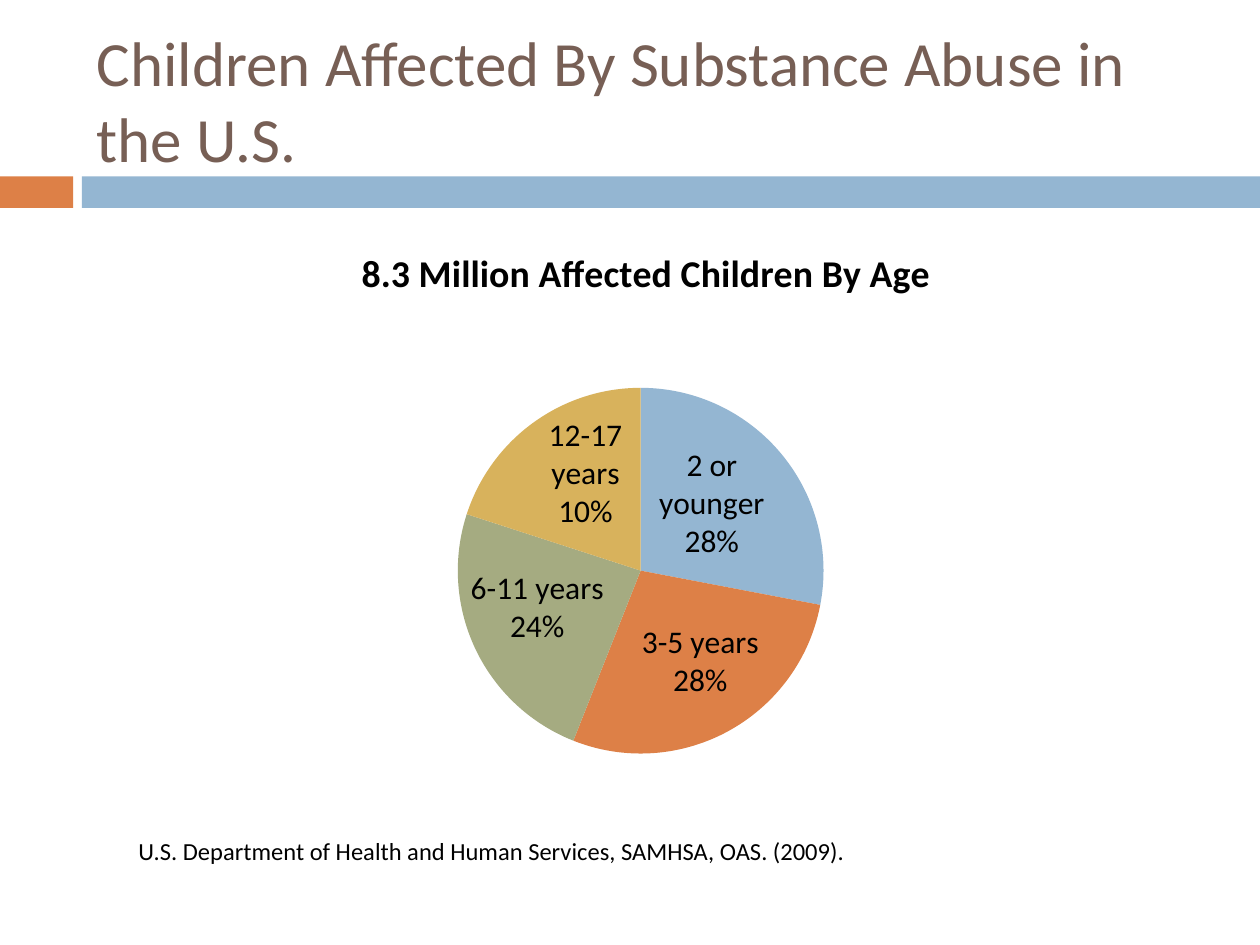
from lxml.etree import SubElement
from pptx import Presentation
from pptx.chart.data import CategoryChartData as Data
from pptx.dml.color import RGBColor
from pptx.enum.chart import XL_CHART_TYPE as Kind, XL_LABEL_POSITION as Spot
from pptx.enum.shapes import MSO_SHAPE as Shape
from pptx.enum.text import MSO_ANCHOR as Anchor
from pptx.oxml.ns import qn
from pptx.util import Inches, Pt

BLUE = RGBColor(0x94, 0xB6, 0xD2)
RUST = RGBColor(0xDD, 0x80, 0x47)
SAGE = RGBColor(0xA5, 0xAB, 0x81)
GOLD = RGBColor(0xD8, 0xB2, 0x5C)
BROWN = RGBColor(0x77, 0x5F, 0x55)
BLACK = RGBColor(0, 0, 0)
FACE = "Calibri"

deck = Presentation()
deck.slide_width, deck.slide_height = Inches(10), Inches(7.5)
slide = deck.slides.add_slide(deck.slide_layouts[6])
wide, high = deck.slide_width, deck.slide_height
left, span = int(wide * 0.067), int(wide * 0.892)


def style(font, size, color=BLACK, bold=False):
    font.name, font.size, font.bold = FACE, Pt(size), bold
    font.color.rgb = color


def write(box, text, size, color):
    frame = box.text_frame
    frame.word_wrap = True
    frame.vertical_anchor = Anchor.MIDDLE
    run = frame.paragraphs[0].add_run()
    run.text = text
    style(run.font, size, color)


for start, end, color in ((0, 0.58, RUST), (0.65, 10, BLUE)):
    bar = slide.shapes.add_shape(
        Shape.RECTANGLE, Inches(start), Inches(1.4), Inches(end - start), Inches(0.25))
    bar.shadow.inherit = False
    bar.fill.solid()
    bar.fill.fore_color.rgb = color
    bar.line.fill.background()

title = slide.shapes.add_textbox(left, Inches(0.25), span, Inches(1.08))
write(title, "Children Affected By Substance Abuse in the U.S.", 36, BROWN)

ages = (
    ("2 or younger", 28, BLUE, -0.01, -0.02),
    ("3-5 years", 28, RUST, 0.03, -0.04),
    ("6-11 years", 24, SAGE, -0.01, 0),
    ("12-17 years", 20, GOLD, 0.01, -0.02),
)
data = Data()
data.categories = [row[0] for row in ages]
data.add_series("Series 1", [row[1] for row in ages])
chart = slide.shapes.add_chart(
    Kind.PIE, left, Inches(1.75), span, Inches(4.92), data).chart
style(chart.font, 18)
chart.has_legend = False
chart.has_title = True
head = chart.chart_title.text_frame.paragraphs[0].add_run()
head.text = "8.3 Million Affected Children By Age"
style(head.font, 21.6, bold=True)

plot = chart.plots[0]
plot.vary_by_categories = True
pie = plot.series[0]
tags = pie.data_labels
tags.show_category_name = True
tags.show_percentage = True
tags.show_value = False
tags.number_format = "0%"
tags.number_format_is_linked = False
tags.position = Spot.INSIDE_END
style(tags.font, 18)

for spot, (age, share, color, right, down) in enumerate(ages):
    point = pie.points[spot]
    point.format.fill.solid()
    point.format.fill.fore_color.rgb = color
    tag = point.data_label
    if age == "12-17 years":
        frame = tag.text_frame
        for line, text in enumerate((age, "10%")):
            para = frame.add_paragraph() if line else frame.paragraphs[0]
            run = para.add_run()
            run.text = text
            style(run.font, 18)
    else:
        style(tag.font, 18)
    tag.position = Spot.INSIDE_END
    node = tags._element.findall(qn("c:dLbl"))[spot]
    for flag, val in (("showVal", 0), ("showCatName", 1), ("showPercent", 1)):
        node.find(qn("c:" + flag)).set("val", str(val))
    lay = SubElement(node, qn("c:layout"))
    node.insert(1, lay)
    hand = SubElement(lay, qn("c:manualLayout"))
    for axis, val in (("x", right), ("y", down)):
        SubElement(hand, qn("c:" + axis)).set("val", str(val))

area = chart.element.find(".//" + qn("c:plotArea"))
lay = area.find(qn("c:layout"))
if lay is None:
    lay = SubElement(area, qn("c:layout"))
    area.insert(0, lay)
hand = SubElement(lay, qn("c:manualLayout"))
for key, val in (("layoutTarget", "inner"), ("xMode", "edge"), ("yMode", "edge"),
                 ("x", 0.33), ("y", 0.27), ("w", 0.33), ("h", 0.59)):
    SubElement(hand, qn("c:" + key)).set("val", str(val))

note = slide.shapes.add_textbox(
    int(wide * 0.1), Inches(6.58), int(wide * 0.792), int(high * 0.045))
write(note, "U.S. Department of Health and Human Services, SAMHSA, OAS. (2009).", 14, BLACK)

deck.save("out.pptx")
